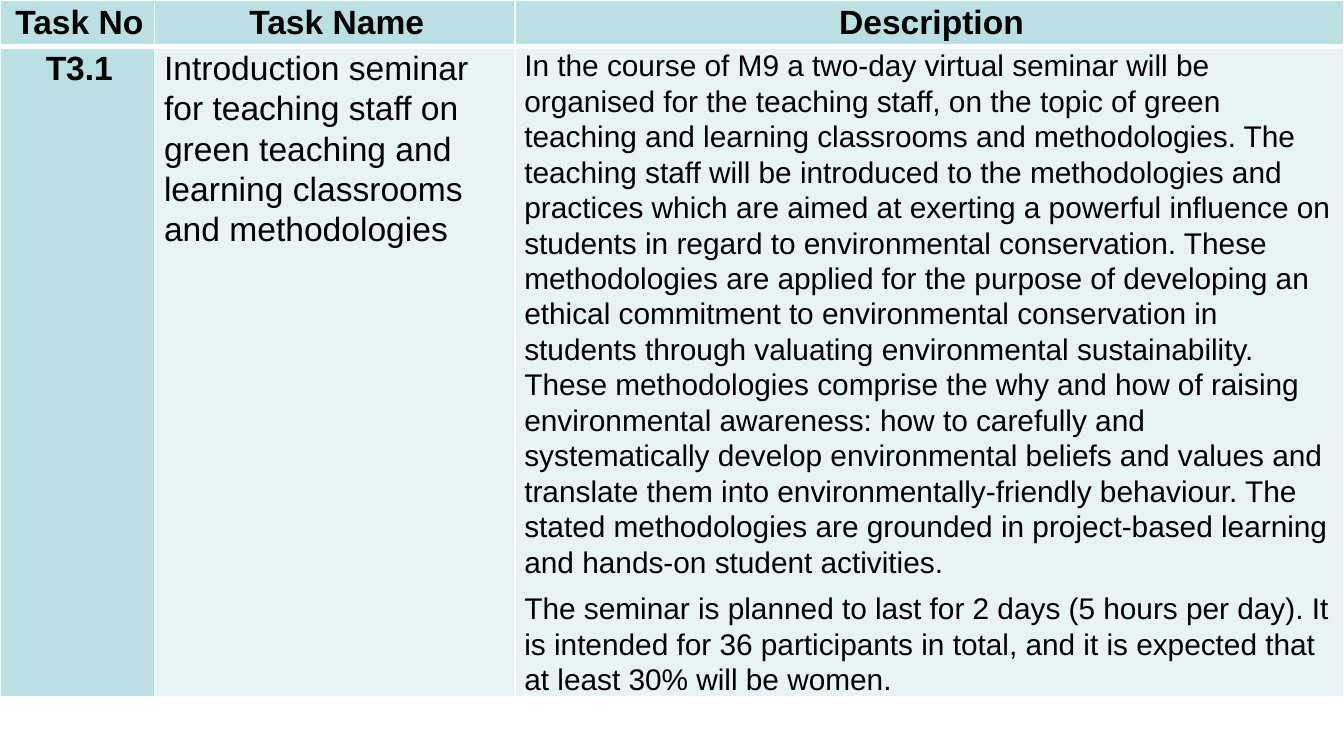
"""Build a slide with a one-row task table."""
import pptx
import pptx.dml.color
import pptx.enum.text
import pptx.oxml
import pptx.oxml.ns
import pptx.util

Cm = pptx.util.Cm
Pt = pptx.util.Pt
ALIGN = pptx.enum.text.PP_ALIGN
ANCHOR = pptx.enum.text.MSO_ANCHOR


def color(code):
    return pptx.dml.color.RGBColor.from_string(code)


def border(cell, widths):
    props = cell._tc.get_or_add_tcPr()
    for spot, (side, width) in enumerate(widths.items()):
        line = pptx.oxml.parse_xml(
            f'<a:ln{side} {pptx.oxml.ns.nsdecls("a")} w="{Pt(width)}">'
            '<a:solidFill><a:srgbClr val="FFFFFF"/></a:solidFill>'
            f'</a:ln{side}>')
        props.insert(spot, line)


heads = ["Task No", "Task Name", "Description"]
name = ("Introduction seminar for teaching staff on green teaching and "
        "learning classrooms and methodologies")
about = [
    "In the course of M9 a two-day virtual seminar will be organised for the "
    "teaching staff, on the topic of green teaching and learning classrooms "
    "and methodologies.",
    "The teaching staff will be introduced to the methodologies and practices "
    "which are aimed at exerting a powerful influence on students in regard "
    "to environmental conservation.",
    "These methodologies are applied for the purpose of developing an ethical "
    "commitment to environmental conservation in students through valuating "
    "environmental sustainability.",
    "These methodologies comprise the why and how of raising environmental "
    "awareness: how to carefully and systematically develop environmental "
    "beliefs and values and translate them into environmentally-friendly "
    "behaviour.",
    "The stated methodologies are grounded in project-based learning and "
    "hands-on student activities."]
plan = ("The seminar is planned to last for 2 days (5 hours per day). It is "
        "intended for 36 participants in total, and it is expected that at "
        "least 30% will be women.")
rows = [heads, ["T3.1", name, " ".join(about) + "\n" + plan]]
widths = [2.92, 6.81, 15.67]
heights = [0.87, 11.1]

deck = pptx.Presentation()
deck.slide_width = Cm(25.4)
deck.slide_height = Cm(14.29)
slide = deck.slides.add_slide(deck.slide_layouts[6])
table = slide.shapes.add_table(
    2, 3, 0, 0, Cm(sum(widths)), Cm(sum(heights))).table
for col, width in zip(table.columns, widths):
    col.width = Cm(width)

for i, texts in enumerate(rows):
    table.rows[i].height = Cm(heights[i])
    for j, text in enumerate(texts):
        cell = table.cell(i, j)
        label = i == 0 or j == 0
        long = i == 1 and j == 2
        cell.text = text
        cell.margin_left, cell.margin_right = Cm(0.18), Cm(0.1)
        cell.margin_top, cell.margin_bottom = Cm(0.03), 0
        cell.vertical_anchor = ANCHOR.MIDDLE if long else ANCHOR.TOP
        cell.fill.solid()
        cell.fill.fore_color.rgb = color("BBE0E3" if label else "E7F3F4")
        border(cell, {"L": 1, "R": 1, "T": 1 if i == 0 else 3,
                      "B": 3 if i == 0 else 1})
        for para in cell.text_frame.paragraphs:
            para.alignment = ALIGN.CENTER if label else ALIGN.LEFT
            para.line_spacing = 1.07
            para.space_after = Pt(8)
            para.font.name = "Arial"
            para.font.size = Pt(16 if long else 18)
            para.font.bold = label
            para.font.color.rgb = color("000000")
        if long:
            cell.text_frame.paragraphs[0].space_after = Pt(6)

deck.save("out.pptx")
